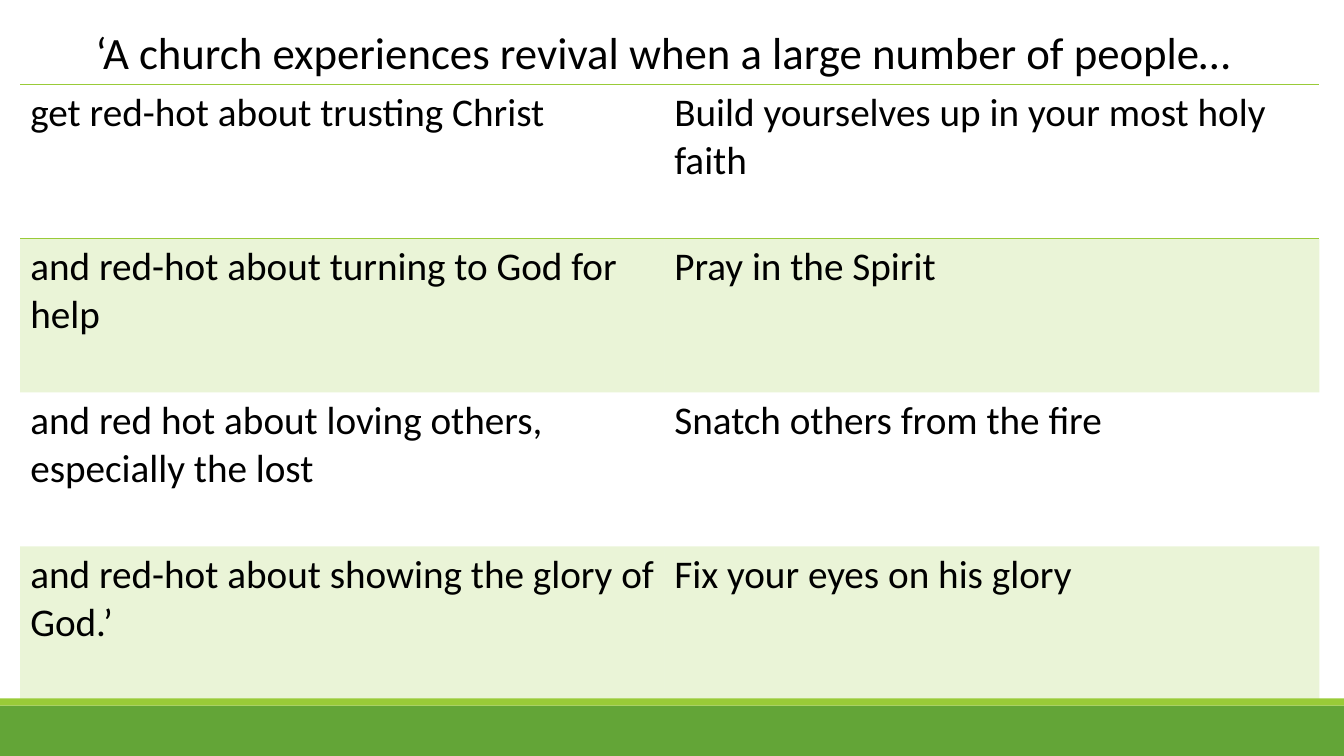
from dataclasses import dataclass

from lxml.etree import SubElement
from pptx import Presentation
from pptx.dml.color import RGBColor
from pptx.enum.shapes import MSO_SHAPE
from pptx.oxml.ns import qn
from pptx.util import Cm, Pt


@dataclass(frozen=True)
class Theme:
    font: str = "Calibri"
    title_size: int = 32
    body_size: int = 28
    text: str = "000000"
    lime: str = "99CB38"
    green: str = "63A537"
    band_alpha: int = 20
    rule_width: int = 1


THEME = Theme()
NO_STYLE = "{2D5ABB26-0587-4C30-8999-92F81FD0307C}"
WIDTH, HEIGHT = 33.87, 19.05
TITLE = "‘A church experiences revival when a large number of people…"
PAIRS = [
    ("get red-hot about trusting Christ",
     "Build yourselves up in your most holy faith"),
    ("and red-hot about turning to God for help", "Pray in the Spirit"),
    ("and red hot about loving others, especially the lost",
     "Snatch others from the fire"),
    ("and red-hot about showing the glory of God.’",
     "Fix your eyes on his glory"),
]


def write(tf, text, size):
    r = tf.paragraphs[0].add_run()
    r.text = text
    r.font.name = THEME.font
    r.font.size = Pt(size)
    r.font.color.rgb = RGBColor.from_string(THEME.text)


def add_bar(s, x, y, w, h, color):
    sp = s.shapes.add_shape(MSO_SHAPE.RECTANGLE, Cm(x), Cm(y), Cm(w), Cm(h))
    sp.shadow.inherit = False
    sp.fill.solid()
    sp.fill.fore_color.rgb = RGBColor.from_string(color)
    sp.line.fill.background()


def add_footer(s, x, y, w, h, edge=0.18):
    """Green band with a thin lime edge along its top."""
    add_bar(s, x, y + edge, w, h - edge, THEME.green)
    add_bar(s, x, y, w, edge, THEME.lime)


def add_title(s, x, y, w, h):
    tf = s.shapes.add_textbox(Cm(x), Cm(y), Cm(w), Cm(h)).text_frame
    tf.word_wrap = True
    write(tf, TITLE, THEME.title_size)


def add_rule(cell, side):
    ln = SubElement(cell._tc.get_or_add_tcPr(), qn(f"a:{side}"),
                    w=str(Pt(THEME.rule_width)))
    fill = SubElement(ln, qn("a:solidFill"))
    SubElement(fill, qn("a:srgbClr"), val=THEME.lime)


def shade(cell):
    cell.fill.solid()
    cell.fill.fore_color.rgb = RGBColor.from_string(THEME.lime)
    color = cell._tc.tcPr.find(f"{qn('a:solidFill')}/{qn('a:srgbClr')}")
    SubElement(color, qn("a:alpha"), val=str(THEME.band_alpha * 1000))


def add_pairs(s, x, y, w, h, left_width):
    """Two-column table with every second row shaded."""
    last = len(PAIRS) - 1
    table = s.shapes.add_table(len(PAIRS), 2, Cm(x), Cm(y), Cm(w), Cm(h)).table
    table.first_row = table.horz_banding = False
    table._tbl.tblPr.find(qn("a:tableStyleId")).text = NO_STYLE
    for column, width in zip(table.columns, (left_width, w - left_width)):
        column.width = Cm(width)
    for i, pair in enumerate(PAIRS):
        table.rows[i].height = Cm(h / len(PAIRS))
        for j, text in enumerate(pair):
            cell = table.cell(i, j)
            write(cell.text_frame, text, THEME.body_size)
            if i == 0:
                add_rule(cell, "lnT")
            if i in (0, last):
                add_rule(cell, "lnB")
            if i % 2:
                shade(cell)
            else:
                cell.fill.background()


def main():
    prs = Presentation()
    prs.slide_width, prs.slide_height = Cm(WIDTH), Cm(HEIGHT)
    s = prs.slides.add_slide(prs.slide_layouts[6])
    add_footer(s, 0, 17.6, WIDTH, HEIGHT - 17.6)
    add_pairs(s, 0.51, 2.13, 32.74, 15.52, left_width=16.23)
    add_title(s, 2.16, 0.51, 30.48, 1.62)
    prs.save("out.pptx")


if __name__ == "__main__":
    main()
